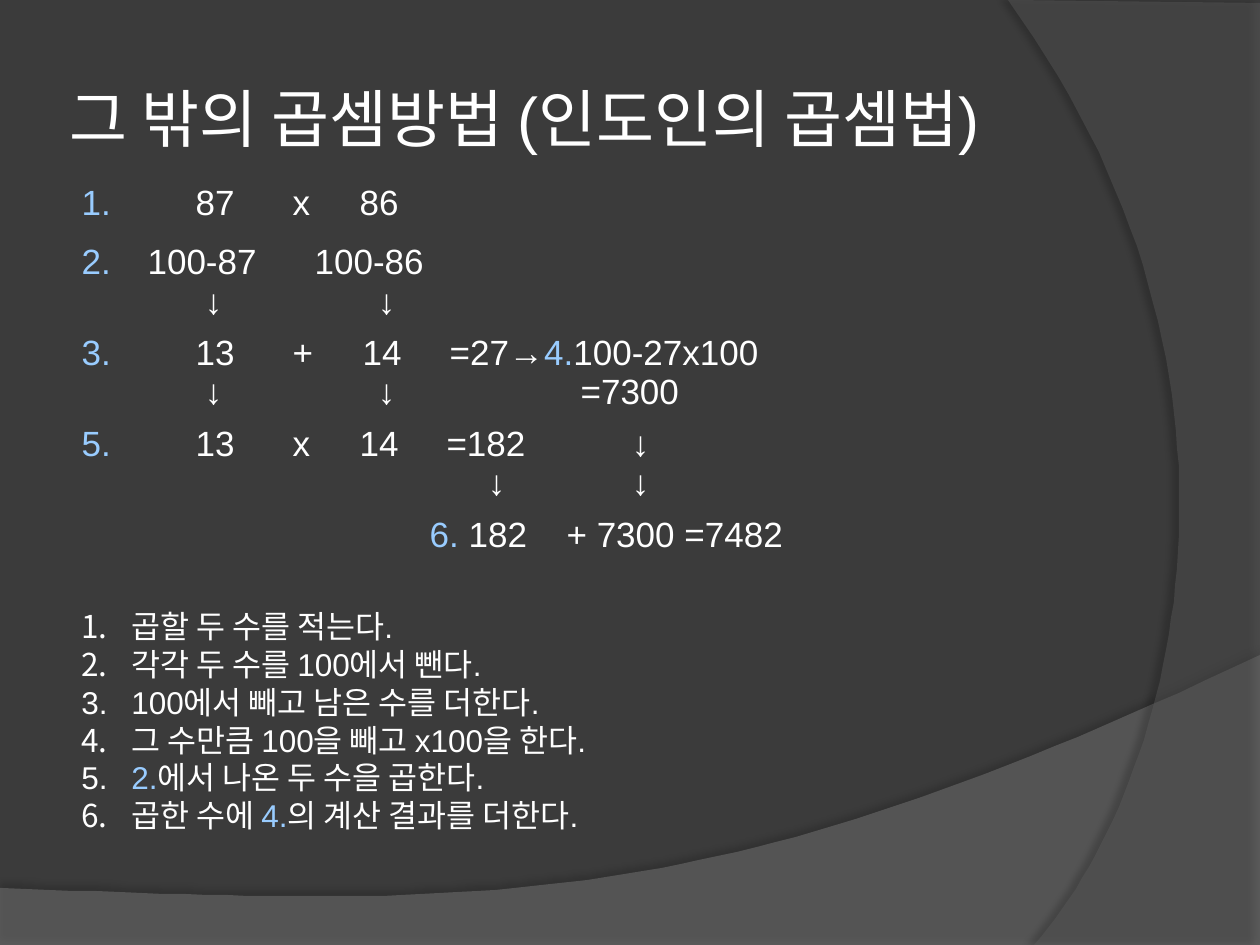
from dataclasses import dataclass

from lxml.etree import SubElement
from pptx import Presentation
from pptx.dml.color import RGBColor
from pptx.enum.text import MSO_ANCHOR, MSO_AUTO_SIZE, PP_ALIGN
from pptx.oxml.ns import qn
from pptx.util import Pt

PX = 914400 / 126


@dataclass(frozen=True)
class Theme:
    back: RGBColor = RGBColor.from_string("3B3B3B")
    text: RGBColor = RGBColor.from_string("FFFFFF")
    mark: RGBColor = RGBColor.from_string("99CCFF")
    wave: RGBColor = RGBColor.from_string("7F7F7F")
    side: RGBColor = RGBColor.from_string("5E5E5E")
    font: str = "Arial"
    head: str = "Roboto"
    big: int = 36
    mid: int = 20
    small: int = 18


theme = Theme()


def px(n):
    return round(n * PX)


def write(par, text, size):
    """Fill a paragraph; parts between asterisks take the mark colour."""
    par.font.name, par.font.size = theme.font, Pt(size)
    for i, part in enumerate(text.split("*")):
        if part:
            run = par.add_run()
            run.text = part
            run.font.color.rgb = theme.mark if i % 2 else theme.text


prs = Presentation()
prs.slide_width, prs.slide_height = px(1260), px(945)
slide = prs.slides.add_slide(prs.slide_layouts[5])
slide.background.fill.solid()
slide.background.fill.fore_color.rgb = theme.back
shapes = slide.shapes

# Backdrop: straight corners, then one Bezier curve back to the start side
# corners, curve, colour, opacity %, shadow opacity %, distance pt, direction
swoops = [
    ([(0, 888), (0, 946), (1260, 946)],
     [(1260, 655), (704, 919), (493, 906), (0, 888)],
     theme.wave, 45, 35, 3.5, 270),
    ([(1260, 3), (1260, 945)],
     [(1034, 945), (1178, 780), (1283, 378), (1008, 0)],
     theme.side, 40, 45, 4, 180),
]
STEPS = 60
for corners, curve, color, alpha, shade, dist, angle in swoops:
    points = list(corners)
    for i in range(STEPS + 1):
        t = i / STEPS
        weights = [(1 - t) ** 3, 3 * t * (1 - t) ** 2, 3 * t * t * (1 - t), t ** 3]
        points.append(tuple(sum(w * p[k] for w, p in zip(weights, curve)) for k in (0, 1)))
    pen = shapes.build_freeform(*points[0], scale=PX)
    pen.add_line_segments(points[1:], close=True)
    swoop = pen.convert_to_shape()
    swoop.fill.solid()
    swoop.fill.fore_color.rgb = color
    swoop.line.fill.background()
    swoop.shadow.inherit = False
    props = swoop.element.spPr
    tint = props.find(qn("a:solidFill")).find(qn("a:srgbClr"))
    SubElement(tint, qn("a:alpha"), val=str(alpha * 1000))
    drop = SubElement(props.find(qn("a:effectLst")), qn("a:outerShdw"),
                      blurRad=str(Pt(4)), dist=str(Pt(dist)),
                      dir=str(angle * 60000), rotWithShape="0")
    black = SubElement(drop, qn("a:srgbClr"), val="000000")
    SubElement(black, qn("a:alpha"), val=str(shade * 1000))

# Worked sum: each line is a list of (tab px, text); arrows are centred on tabs
rows = [
    ("1.", [[(48, "87"), (145, "x"), (212, "86")]]),
    ("2.", [[(0, "100-87"), (167, "100-86")],
            [(66, "↓"), (239, "↓")]]),
    ("3.", [[(48, "13"), (145, "+"), (215, "14"), (302, "=27→*4.*100-27x100")],
            [(66, "↓"), (239, "↓"), (433, "=7300")]]),
    ("5.", [[(48, "13"), (145, "x"), (212, "14"), (299, "=182"), (493, "↓")],
            [(349, "↓"), (493, "↓")]]),
    ("", [[(282, "*6.* 182"), (419, "+ 7300 =7482")]]),
]
heights = [59, 91, 91, 91, 52]
frame = shapes.add_table(len(rows), 2, px(69), px(178), px(1030), px(sum(heights)))
table = frame.table
table.first_row = table.horz_banding = False
plain = "{2D5ABB26-0587-4C30-8999-92F81FD0307C}"
frame.element.find(".//" + qn("a:tableStyleId")).text = plain
for col, width in zip(table.columns, (66, 964)):
    col.width = px(width)
for row, height, (label, lines) in zip(table.rows, heights, rows):
    row.height = px(height)
    for cell in row.cells:
        cell.fill.background()
    write(row.cells[0].text_frame.paragraphs[0], f"*{label}*", theme.mid)
    frame = row.cells[1].text_frame
    for i, line in enumerate(lines):
        par = frame.add_paragraph() if i else frame.paragraphs[0]
        text = "".join("\t" * (x > 0) + word for x, word in line)
        write(par, text, theme.mid)
        props = par._p.get_or_add_pPr()
        tabs = SubElement(props, qn("a:tabLst"))
        props.insert(0, tabs)
        for x, word in line:
            if x:
                SubElement(tabs, qn("a:tab"), pos=str(px(x)),
                           algn="ctr" if word == "↓" else "l")

# Numbered steps
steps = [
    "곱할 두 수를 적는다.",
    "각각 두 수를 100에서 뺀다.",
    "100에서 빼고 남은 수를 더한다.",
    "그 수만큼 100을 빼고 x100을 한다.",
    "*2.*에서 나온 두 수을 곱한다.",
    "곱한 수에 *4.*의 계산 결과를 더한다.",
]
frame = shapes.add_textbox(px(69), px(601), px(955), px(242)).text_frame
frame.word_wrap = True
for i, step in enumerate(steps):
    par = frame.add_paragraph() if i else frame.paragraphs[0]
    write(par, step, theme.small)
    props = par._p.get_or_add_pPr()
    props.set("marL", str(px(50)))
    props.set("indent", str(px(-50)))
    tint = SubElement(props, qn("a:buClr"))
    SubElement(tint, qn("a:srgbClr"), val=str(theme.text))
    font = SubElement(props, qn("a:buFont"), typeface=theme.font)
    number = SubElement(props, qn("a:buAutoNum"), type="arabicPeriod")
    for k, item in enumerate((tint, font, number)):
        props.insert(k, item)

# Title, in front of the backdrop
title = shapes.title
title.left, title.top, title.width, title.height = px(63), px(38), px(1030), px(158)
shapes.element.append(title.element)
frame = title.text_frame
frame.auto_size = MSO_AUTO_SIZE.NONE
frame.vertical_anchor = MSO_ANCHOR.MIDDLE
frame.margin_left = frame.margin_right = frame.margin_top = frame.margin_bottom = Pt(3.6)
par = frame.paragraphs[0]
par.alignment = PP_ALIGN.LEFT
par.font.size, par.font.color.rgb = Pt(theme.big), theme.text
for text, name in (("그 밖의 곱셈방법", theme.head), (" (인도인의 곱셈법)", theme.font)):
    run = par.add_run()
    run.text, run.font.name = text, name

prs.save("out.pptx")
